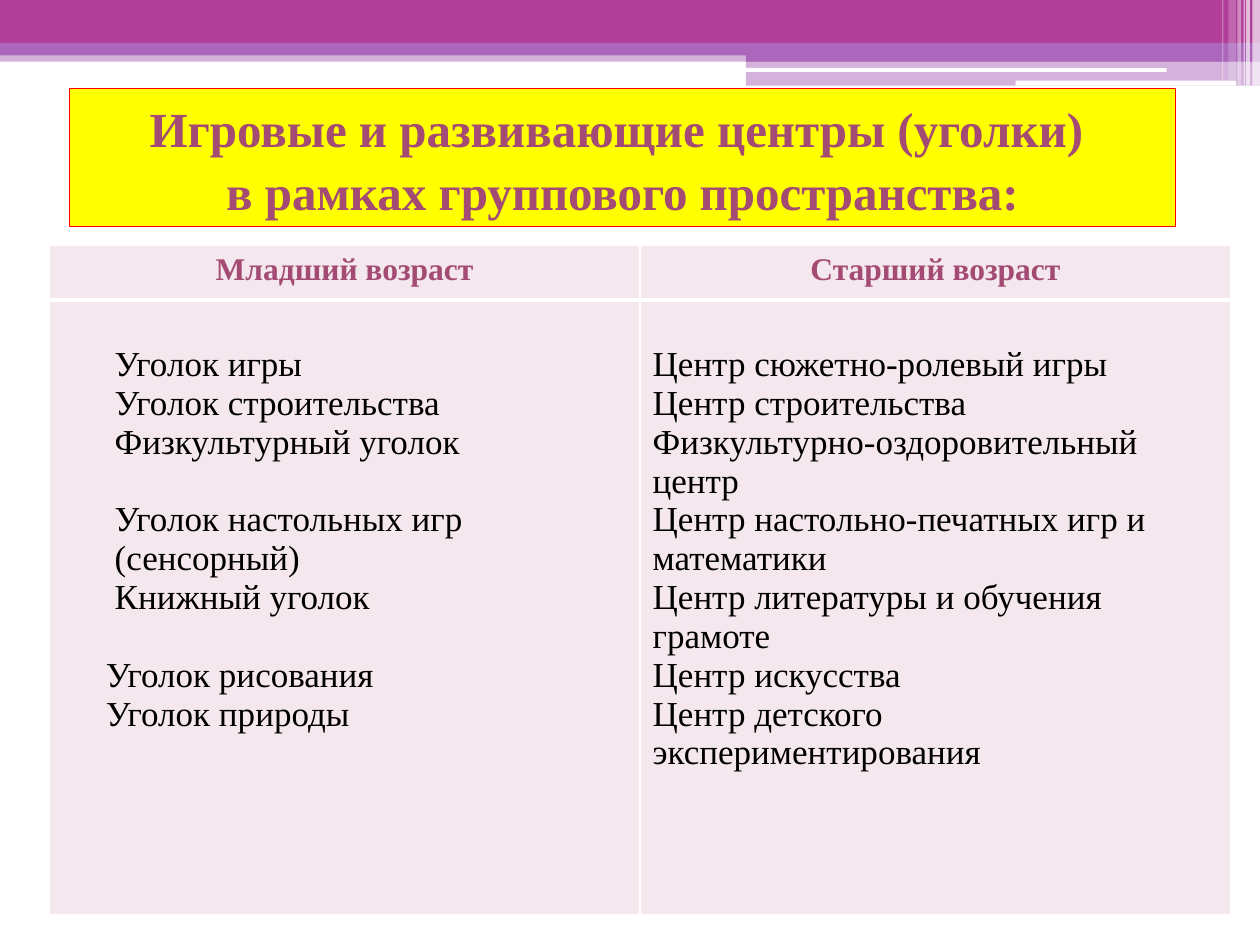
import dataclasses
import typing

import lxml.etree
import pptx
import pptx.dml.color
import pptx.enum.shapes
import pptx.enum.text
import pptx.oxml.ns
import pptx.util

Inches = pptx.util.Inches
Pt = pptx.util.Pt
qn = pptx.oxml.ns.qn


@dataclasses.dataclass(frozen=True)
class Theme:
    font: str = "Times New Roman"
    magenta: str = "B13F9A"
    violet: str = "AC66BB"
    white: str = "FFFFFF"
    black: str = "000000"
    heading: str = "A34B73"
    heading_outline: str = "B14DC7"
    banner: str = "FFFF00"
    banner_line: str = "FF0000"
    cell: str = "F4E7ED"
    title_size: int = 28
    header_size: int = 18
    body_size: int = 20


THEME = Theme()


@dataclasses.dataclass(frozen=True)
class Bar:
    left: float
    top: float
    width: float
    height: float
    color: str
    opacity: int = 100
    rounded: bool = False


@dataclasses.dataclass(frozen=True)
class Item:
    text: str
    indent: float = 0
    space_before: float = 0


@dataclasses.dataclass(frozen=True)
class Column:
    header: str
    items: tuple[Item, ...]


LINE_GAP = 22.2
WIDE_INDENT = 0.42
NARROW_INDENT = 0.35

BARS = (
    Bar(0, 0.4, 10, 0.09, THEME.violet, 50),
    Bar(0, 0, 10, 0.34, THEME.magenta),
    Bar(0, 0.34, 10, 0.1, THEME.violet),
    Bar(5.92, 0.39, 4.08, 0.1, THEME.violet),
    Bar(5.92, 0.48, 4.08, 0.2, THEME.violet, 50),
    Bar(5.91, 0.54, 3.35, 0.03, THEME.white, rounded=True),
    Bar(8.06, 0.64, 1.75, 0.04, THEME.white, rounded=True),
    Bar(9.94, 0, 0.06, 0.68, THEME.white, 65),
    Bar(9.89, 0, 0.03, 0.68, THEME.white, 65),
    Bar(9.87, 0, 0.01, 0.68, THEME.white, 60),
    Bar(9.82, 0, 0.03, 0.68, THEME.white, 40),
    Bar(9.75, 0, 0.06, 0.64, THEME.white, 20),
    Bar(9.7, 0, 0.01, 0.64, THEME.white, 30),
)

COLUMNS = (
    Column("Младший возраст", (
        Item("Уголок игры", WIDE_INDENT),
        Item("Уголок строительства", WIDE_INDENT),
        Item("Физкультурный уголок", WIDE_INDENT),
        Item("Уголок настольных игр", WIDE_INDENT, LINE_GAP),
        Item("(сенсорный)", WIDE_INDENT),
        Item("Книжный уголок", WIDE_INDENT),
        Item("Уголок рисования", NARROW_INDENT, LINE_GAP),
        Item("Уголок природы", NARROW_INDENT),
    )),
    Column("Старший возраст", (
        Item("Центр сюжетно-ролевый игры"),
        Item("Центр строительства"),
        Item("Физкультурно-оздоровительный центр"),
        Item("Центр настольно-печатных игр и математики"),
        Item("Центр литературы и обучения грамоте"),
        Item("Центр искусства"),
        Item("Центр детского экспериментирования"),
    )),
)


def rgb(color: str) -> pptx.dml.color.RGBColor:
    return pptx.dml.color.RGBColor.from_string(color)


def add_line_fill(parent: typing.Any, tag: str, width: float, color: str) -> None:
    line = lxml.etree.SubElement(parent, qn(tag), w=str(Pt(width)))
    fill = lxml.etree.SubElement(line, qn("a:solidFill"))
    lxml.etree.SubElement(fill, qn("a:srgbClr"), val=color)


def format_runs(paragraph: typing.Any, size: int, color: str, bold: bool) -> None:
    for run in paragraph.runs:
        run.font.name = THEME.font
        run.font.size = Pt(size)
        run.font.bold = bold
        run.font.color.rgb = rgb(color)


def draw_bar(slide: typing.Any, bar: Bar) -> typing.Any:
    kinds = pptx.enum.shapes.MSO_SHAPE
    shape = slide.shapes.add_shape(
        kinds.ROUNDED_RECTANGLE if bar.rounded else kinds.RECTANGLE,
        Inches(bar.left), Inches(bar.top), Inches(bar.width), Inches(bar.height))
    shape.shadow.inherit = False
    shape.fill.solid()
    shape.fill.fore_color.rgb = rgb(bar.color)
    shape.line.fill.background()
    if bar.opacity < 100:
        color = shape._element.spPr.find(qn("a:solidFill"))[0]
        lxml.etree.SubElement(color, qn("a:alpha"), val=str(bar.opacity * 1000))
    return shape


def draw_title(slide: typing.Any) -> None:
    shape = draw_bar(slide, Bar(0.55, 0.7, 8.78, 1.1, THEME.banner))
    shape.line.color.rgb = rgb(THEME.banner_line)
    shape.line.width = Pt(0.75)
    frame = shape.text_frame
    frame.text = "Игровые и развивающие центры (уголки) \vв рамках группового пространства:"
    frame.word_wrap = True
    frame.vertical_anchor = pptx.enum.text.MSO_ANCHOR.BOTTOM
    paragraph = frame.paragraphs[0]
    paragraph.alignment = pptx.enum.text.PP_ALIGN.CENTER
    paragraph.line_spacing = 1.08
    format_runs(paragraph, THEME.title_size, THEME.heading, True)
    for run in paragraph.runs:
        properties = run._r.get_or_add_rPr()
        add_line_fill(properties, "a:ln", 1, THEME.heading_outline)
        properties.insert(0, properties[-1])


def style_cell(cell: typing.Any, bottom_width: float) -> None:
    properties = cell._tc.get_or_add_tcPr()
    for side in "LRTB":
        add_line_fill(properties, f"a:ln{side}", bottom_width if side == "B" else 1, THEME.white)
    cell.fill.solid()
    cell.fill.fore_color.rgb = rgb(THEME.cell)


def fill_column(header: typing.Any, body: typing.Any, column: Column) -> None:
    style_cell(header, 3)
    header.text_frame.text = column.header
    paragraph = header.text_frame.paragraphs[0]
    paragraph.alignment = pptx.enum.text.PP_ALIGN.CENTER
    format_runs(paragraph, THEME.header_size, THEME.heading, True)

    style_cell(body, 1)
    body.margin_top = Inches(0.36)
    body.text_frame.text = "\n".join(item.text for item in column.items)
    for paragraph, item in zip(body.text_frame.paragraphs, column.items):
        paragraph.space_before = Pt(item.space_before)
        paragraph._p.get_or_add_pPr().set("marL", str(Inches(item.indent)))
        format_runs(paragraph, THEME.body_size, THEME.black, False)


def draw_table(slide: typing.Any) -> None:
    table = slide.shapes.add_table(
        2, len(COLUMNS), Inches(0.39), Inches(1.95), Inches(9.38), Inches(5.31)).table
    table.horz_banding = False
    for row, height in zip(table.rows, (0.43, 4.88)):
        row.height = Inches(height)
    for index, column in enumerate(COLUMNS):
        fill_column(table.cell(0, index), table.cell(1, index), column)


def main() -> None:
    presentation = pptx.Presentation()
    presentation.slide_width = Inches(10)
    presentation.slide_height = Inches(7.5)
    slide = presentation.slides.add_slide(presentation.slide_layouts[6])
    for bar in BARS:
        draw_bar(slide, bar)
    draw_title(slide)
    draw_table(slide)
    presentation.save("out.pptx")


if __name__ == "__main__":
    main()
